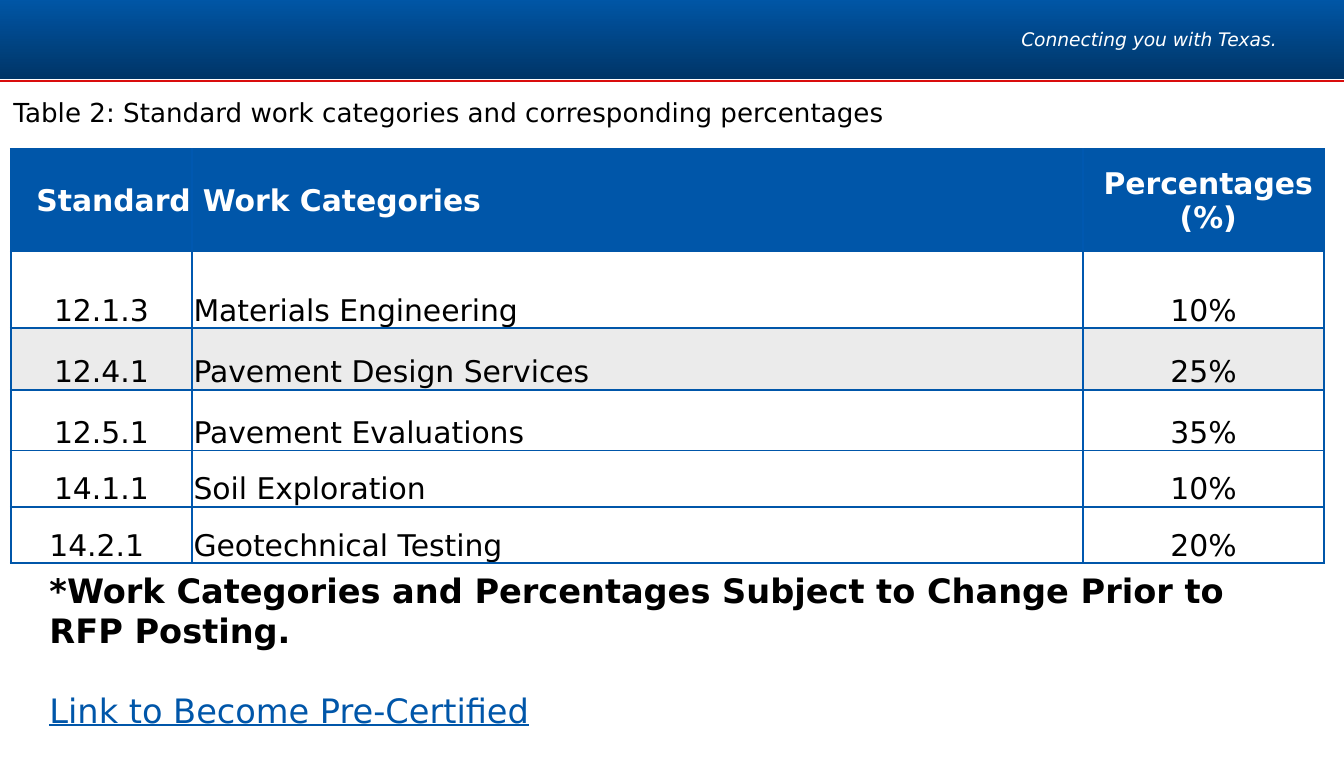
from dataclasses import dataclass

from lxml.etree import SubElement
from pptx import Presentation
from pptx.dml.color import RGBColor
from pptx.enum.shapes import MSO_CONNECTOR as Connector, MSO_SHAPE as Shape
from pptx.enum.text import MSO_ANCHOR as Anchor, MSO_AUTO_SIZE as AutoSize, PP_ALIGN as Align
from pptx.oxml.ns import qn
from pptx.util import Inches, Pt


@dataclass(frozen=True)
class Theme:
    font: str = "DejaVu Sans"
    blue: str = "0056A9"
    inner_blue: str = "0058B0"
    banner_top: str = "0057A8"
    banner_bottom: str = "003567"
    red: str = "D90D0D"
    white: str = "FFFFFF"
    black: str = "000000"
    band: str = "EBEBEB"
    tagline_size: int = 10
    caption_size: int = 14
    table_size: int = 16
    note_size: int = 18
    rule_width: int = 1


THEME = Theme()
HEADINGS = ("Standard", "Work Categories", "Percentages (%)")
HEADING_ALIGNS = (Align.RIGHT, Align.LEFT, Align.CENTER)
BODY_ALIGNS = (Align.CENTER, Align.LEFT, Align.CENTER)
CATEGORIES = (
    ("12.1.3", "Materials Engineering", "10%"),
    ("12.4.1", "Pavement Design Services", "25%"),
    ("12.5.1", "Pavement Evaluations", "35%"),
    ("14.1.1", "Soil Exploration", "10%"),
    ("14.2.1 ", "Geotechnical Testing", "20%"),
)
BANDED_ROW = 2
COLUMN_WIDTHS = (1.35, 6.63, 1.79)
ROW_HEIGHTS = (0.76, 0.57, 0.46, 0.45, 0.42, 0.42)


def rgb(value):
    return RGBColor.from_string(value)


def style_para(para, size, color, align=Align.LEFT, bold=False, italic=False, underline=False):
    para.alignment = align
    for span in para.runs:
        font = span.font
        font.name, font.size = THEME.font, Pt(size)
        font.bold, font.italic, font.underline = bold, italic, underline
        font.color.rgb = rgb(color)


def add_banner(page, left, top, width, height):
    banner = page.shapes.add_shape(Shape.RECTANGLE, left, top, width, height)
    banner.shadow.inherit = False
    banner.line.fill.background()
    banner.fill.gradient()
    banner.fill.gradient_angle = 270
    for stop, color in zip(banner.fill.gradient_stops, (THEME.banner_top, THEME.banner_bottom)):
        stop.color.rgb = rgb(color)

    rule_y = top + height + Inches(0.01)
    rule = page.shapes.add_connector(Connector.STRAIGHT, left, rule_y, left + width, rule_y)
    rule.line.color.rgb = rgb(THEME.red)
    rule.line.width = Pt(THEME.rule_width)
    SubElement(rule._element.spPr, qn("a:effectLst"))

    tagline = page.shapes.add_textbox(Inches(7.17), 0, Inches(2.33), Inches(0.6))
    frame = tagline.text_frame
    frame.margin_left = frame.margin_top = frame.margin_right = frame.margin_bottom = 0
    frame.word_wrap = False
    frame.vertical_anchor = Anchor.MIDDLE
    frame.text = "Connecting you with Texas."
    para = frame.paragraphs[0]
    para.line_spacing = 0.9
    style_para(para, THEME.tagline_size, THEME.white, Align.RIGHT, italic=True)


def place_caption(page, left, top, width, height):
    title = page.shapes.title
    title.left, title.top, title.width, title.height = left, top, width, height
    frame = title.text_frame
    frame.text = "Table 2: Standard work categories and corresponding percentages"
    frame.word_wrap = False
    frame.auto_size = AutoSize.SHAPE_TO_FIT_TEXT
    frame.vertical_anchor = Anchor.TOP
    style_para(frame.paragraphs[0], THEME.caption_size, THEME.black)


def set_borders(cell, column):
    last = len(COLUMN_WIDTHS) - 1
    colors = {
        "a:lnL": THEME.blue if column == 0 else THEME.inner_blue,
        "a:lnR": THEME.blue if column == last else THEME.inner_blue,
        "a:lnT": THEME.blue,
        "a:lnB": THEME.blue,
    }
    properties = cell._tc.get_or_add_tcPr()
    for side, color in colors.items():
        line = SubElement(properties, qn(side), w=str(Pt(THEME.rule_width)))
        fill = SubElement(line, qn("a:solidFill"))
        SubElement(fill, qn("a:srgbClr"), val=color)


def fill_cell(cell, row, column, text):
    heading = row == 0
    cell.text = text
    cell.margin_left = Inches(0.08 if heading else 0.01)
    cell.margin_top = cell.margin_right = Inches(0.01)
    cell.margin_bottom = 0
    cell.vertical_anchor = Anchor.MIDDLE if heading else Anchor.BOTTOM
    set_borders(cell, column)
    cell.fill.solid()
    plain = THEME.band if row == BANDED_ROW else THEME.white
    cell.fill.fore_color.rgb = rgb(THEME.blue if heading else plain)
    aligns = HEADING_ALIGNS if heading else BODY_ALIGNS
    color = THEME.white if heading else THEME.black
    style_para(cell.text_frame.paragraphs[0], THEME.table_size, color, aligns[column], bold=heading)


def add_category_table(page, left, top, width, height):
    rows = (HEADINGS, *CATEGORIES)
    table = page.shapes.add_table(len(rows), len(HEADINGS), left, top, width, height).table
    table.horz_banding = False
    for column, size in zip(table.columns, COLUMN_WIDTHS):
        column.width = Inches(size)
    for row, size in zip(table.rows, ROW_HEIGHTS):
        row.height = Inches(size)
    for row, texts in enumerate(rows):
        for column, text in enumerate(texts):
            fill_cell(table.cell(row, column), row, column, text)


def add_notes(page, left, top, width, height):
    frame = page.shapes.add_textbox(left, top, width, height).text_frame
    frame.word_wrap = True
    frame.auto_size = AutoSize.SHAPE_TO_FIT_TEXT
    frame.text = "*Work Categories and Percentages Subject to Change Prior to RFP Posting."
    style_para(frame.paragraphs[0], THEME.note_size, THEME.black, bold=True)
    link = frame.add_paragraph()
    link.text = "Link to Become Pre-Certified"
    link.space_before = Pt(21)
    style_para(link, THEME.note_size, THEME.blue, underline=True)


def main():
    deck = Presentation()
    deck.slide_width, deck.slide_height = Inches(10), Inches(5.63)
    page = deck.slides.add_slide(deck.slide_layouts[5])
    add_banner(page, Inches(-0.01), Inches(-0.03), Inches(10.02), Inches(0.62))
    place_caption(page, 0, Inches(0.67), Inches(6.77), Inches(0.34))
    add_category_table(page, Inches(0.08), Inches(1.11), Inches(sum(COLUMN_WIDTHS)), Inches(sum(ROW_HEIGHTS)))
    add_notes(page, Inches(0.27), Inches(4.19), Inches(9.26), Inches(1.31))
    deck.save("out.pptx")


if __name__ == "__main__":
    main()
